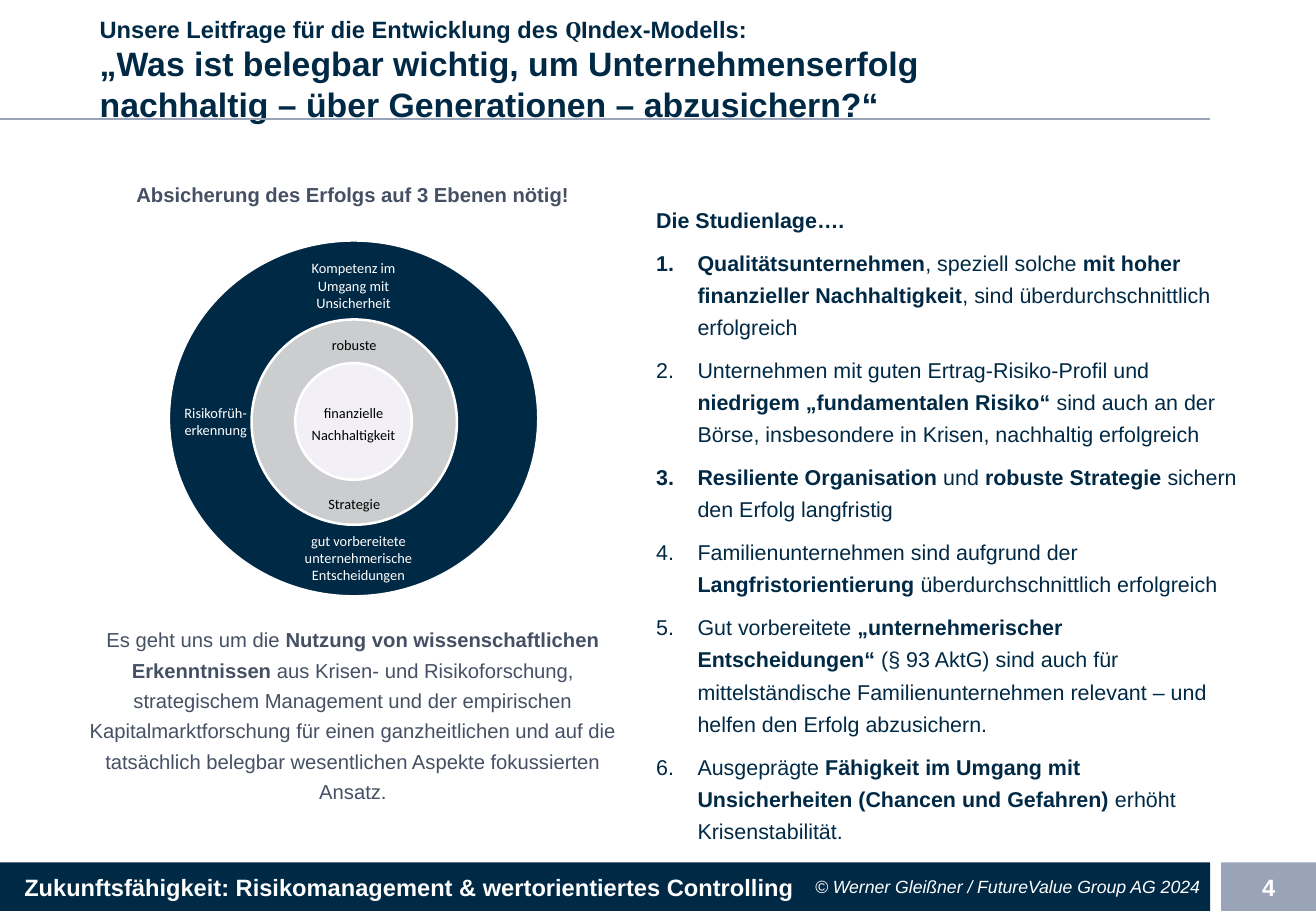
import dataclasses

import pptx
import pptx.dml.color
import pptx.enum.shapes
import pptx.enum.text
import pptx.oxml.xmlchemy
import pptx.util
from lxml import etree
from pptx.oxml.ns import qn

Inches = pptx.util.Inches
Pt = pptx.util.Pt
Align = pptx.enum.text.PP_ALIGN
Anchor = pptx.enum.text.MSO_ANCHOR
Shape = pptx.enum.shapes.MSO_SHAPE


@dataclasses.dataclass(frozen=True)
class Theme:
    navy: str = "002945"
    steel: str = "99A4B9"
    slate: str = "455064"
    silver: str = "CBCDCF"
    pale: str = "F2F0F6"
    white: str = "FFFFFF"
    black: str = "000000"
    font: str = "Arial"
    label_font: str = "Calibri"
    symbol_font: str = "Cambria"
    question_size: float = 20
    heading_size: float = 14
    list_size: float = 12.7
    body_size: float = 12
    credit_size: float = 10.5
    label_size: float = 8.5
    line_width: float = 1.5
    spacing: float = 1.25


THEME = Theme()

RINGS = [  # left, top, width, height, fill
    (1.39, 1.98, 3.04, 2.93, THEME.navy),
    (2.07, 2.63, 1.69, 1.69, THEME.silver),
    (2.43, 2.99, 0.96, 0.96, THEME.pale),
]
RING_LABELS = [  # text, left, top, width, colour, line spacing
    ("robuste", 2.64, 2.63, 0.55, THEME.black, THEME.spacing),
    ("Kompetenz im Umgang mit Unsicherheit", 2.53, 2.16, 0.76, THEME.white, 1),
    ("finanzielle Nachhaltigkeit", 2.53, 3.28, 0.76, THEME.black, THEME.spacing),
    ("gut vorbereitete unternehmerische Entscheidungen", 2.43, 4.4, 1.04, THEME.white, 1),
    ("Risikofrüh-erkennung", 1.5, 3.28, 0.55, THEME.white, 1),
    ("Strategie", 2.64, 3.94, 0.55, THEME.black, THEME.spacing),
]
# Double asterisks switch bold on and off
FINDINGS = [
    "**Qualitätsunternehmen**, speziell solche **mit hoher finanzieller Nachhaltigkeit**, "
    "sind überdurchschnittlich erfolgreich",
    "Unternehmen mit guten Ertrag-Risiko-Profil und **niedrigem „fundamentalen Risiko“** "
    "sind auch an der Börse, insbesondere in Krisen, nachhaltig erfolgreich",
    "**Resiliente Organisation** und **robuste Strategie** sichern den Erfolg langfristig",
    "Familienunternehmen sind aufgrund der **Langfristorientierung** "
    "überdurchschnittlich erfolgreich",
    "Gut vorbereitete **„unternehmerischer Entscheidungen“** (§ 93 AktG) sind auch für "
    "mittelständische Familienunternehmen relevant – und helfen den Erfolg abzusichern.",
    "Ausgeprägte **Fähigkeit im Umgang mit Unsicherheiten (Chancen und Gefahren)** "
    "erhöht Krisenstabilität.",
]
APPROACH = (
    "Es geht uns um die **Nutzung von wissenschaftlichen Erkenntnissen** aus Krisen- und "
    "Risikoforschung, strategischem Management und der empirischen Kapitalmarktforschung "
    "für einen ganzheitlichen und auf die tatsächlich belegbar wesentlichen Aspekte "
    "fokussierten Ansatz."
)


def rgb(colour):
    return pptx.dml.color.RGBColor.from_string(colour)


def write(paragraph, text, size, colour, font=THEME.font, bold=False, italic=False,
          align=Align.LEFT, spacing=1, before=0, after=0):
    paragraph.alignment = align
    paragraph.line_spacing = spacing
    paragraph.space_before, paragraph.space_after = Pt(before), Pt(after)
    for index, part in enumerate(text.split("**")):
        if part:
            run = paragraph.add_run()
            run.text = part
            run.font.name, run.font.size = font, Pt(size)
            run.font.color.rgb = rgb(colour)
            run.font.bold = bold or index % 2 == 1
            run.font.italic = italic


def set_bullet(paragraph, numbered=False):
    properties = paragraph._p.get_or_add_pPr()
    hang = Inches(0.34) if numbered else 0
    properties.set("marL", str(hang))
    properties.set("indent", str(-hang))
    if numbered:
        etree.SubElement(properties, qn("a:buFont"), typeface="+mj-lt")
        etree.SubElement(properties, qn("a:buAutoNum"), type="arabicPeriod")
    else:
        etree.SubElement(properties, qn("a:buNone"))


def frame_text(shape, anchor=Anchor.MIDDLE, left=0.08, right=0.08, vertical=0.04):
    frame = shape.text_frame
    frame.word_wrap = True
    frame.auto_size = pptx.enum.text.MSO_AUTO_SIZE.NONE
    frame.vertical_anchor = anchor
    frame.margin_left, frame.margin_right = Inches(left), Inches(right)
    frame.margin_top = frame.margin_bottom = Inches(vertical)
    return frame


def place(shape, left, top, width, height):
    shape.left, shape.top = Inches(left), Inches(top)
    shape.width, shape.height = Inches(width), Inches(height)


def add_filled(shapes, kind, left, top, width, height, fill, line=None):
    shape = shapes.add_shape(kind, Inches(left), Inches(top), Inches(width), Inches(height))
    shape.shadow.inherit = False
    shape.fill.solid()
    shape.fill.fore_color.rgb = rgb(fill)
    if line:
        shape.line.color.rgb = rgb(line)
        shape.line.width = Pt(THEME.line_width)
    else:
        shape.line.fill.background()
    return shape


def add_label(shapes, text, left, top, width, height, inset=0, vertical=0, **style):
    box = shapes.add_textbox(Inches(left), Inches(top), Inches(width), Inches(height))
    frame = frame_text(box, left=inset, right=inset, vertical=vertical)
    write(frame.paragraphs[0], text, **style)


def add_footer(slide):
    top, height = 7.1, 0.4
    banner = add_filled(slide.shapes, Shape.RECTANGLE, 0, top, 9.96, height, THEME.navy)
    write(frame_text(banner, left=0.2).paragraphs[0],
          "Zukunftsfähigkeit: Risikomanagement & wertorientiertes Controlling",
          size=THEME.heading_size, colour=THEME.white, bold=True)
    number = add_filled(slide.shapes, Shape.RECTANGLE, 10.05, top, 0.78, height, THEME.steel)
    write(frame_text(number).paragraphs[0], "4", size=THEME.heading_size,
          colour=THEME.white, bold=True, align=Align.CENTER)
    add_label(slide.shapes, "© Werner Gleißner / FutureValue Group AG 2024",
              5.63, top, 4.33, height, inset=0.08, vertical=0.04, size=THEME.credit_size,
              colour=THEME.white, italic=True, align=Align.RIGHT)


def add_title_rule(slide):
    rule = slide.shapes.add_connector(pptx.enum.shapes.MSO_CONNECTOR.STRAIGHT,
                                      0, Inches(0.98), Inches(9.96), Inches(0.98))
    rule.line.color.rgb = rgb(THEME.steel)
    rule.line.width = Pt(THEME.line_width)
    etree.SubElement(rule._element.spPr, qn("a:effectLst"))


def fill_title(title):
    place(title, 0.74, 0.32, 7.52, 0.5)
    paragraph = frame_text(title).paragraphs[0]
    style = dict(colour=THEME.navy, bold=True)
    write(paragraph, "Unsere Leitfrage für die Entwicklung des ", THEME.heading_size, **style)
    write(paragraph, "Q", THEME.heading_size, font=THEME.symbol_font, **style)
    write(paragraph, "Index-Modells:", THEME.heading_size, **style)
    paragraph.add_line_break()
    write(paragraph, "„Was ist belegbar wichtig, um Unternehmenserfolg nachhaltig – "
          "über Generationen – abzusichern?“", THEME.question_size, **style)


def fill_approach(body):
    place(body, 0.51, 1.46, 4.79, 5.3)
    frame = frame_text(body, Anchor.TOP)
    style = dict(size=THEME.body_size, colour=THEME.slate, align=Align.CENTER, after=6)
    heading, approach = frame.paragraphs[0], frame.add_paragraph()
    set_bullet(heading)
    write(heading, "Absicherung des Erfolgs auf 3 Ebenen nötig!", bold=True, **style)
    set_bullet(approach)
    # The space before leaves room for the rings
    write(approach, APPROACH, spacing=THEME.spacing, before=240, **style)


def fill_findings(body):
    place(body, 5.33, 1.62, 4.94, 5.3)
    frame = frame_text(body, Anchor.TOP, left=0.07, right=0.07, vertical=0.03)
    style = dict(size=THEME.list_size, colour=THEME.navy, spacing=THEME.spacing, after=3.2)
    set_bullet(frame.paragraphs[0])
    write(frame.paragraphs[0], "Die Studienlage….", bold=True, **style)
    for finding in FINDINGS:
        paragraph = frame.add_paragraph()
        set_bullet(paragraph, numbered=True)
        write(paragraph, finding, before=3.2, **style)


def add_rings(slide):
    shapes = slide.shapes.add_group_shape().shapes
    for left, top, width, height, fill in RINGS:
        add_filled(shapes, Shape.OVAL, left, top, width, height, fill, THEME.white)
    for text, left, top, width, colour, spacing in RING_LABELS:
        add_label(shapes, text, left, top, width, 0.38, size=THEME.label_size,
                  colour=colour, font=THEME.label_font, align=Align.CENTER, spacing=spacing)


def main():
    presentation = pptx.Presentation()
    presentation.slide_width, presentation.slide_height = Inches(10.83), Inches(7.5)
    slide = presentation.slides.add_slide(presentation.slide_layouts[3])
    title, approach, findings = slide.placeholders
    # Frame of the page
    add_footer(slide)
    add_title_rule(slide)
    # Content
    fill_title(title)
    fill_approach(approach)
    fill_findings(findings)
    add_rings(slide)
    presentation.save("out.pptx")


if __name__ == "__main__":
    main()
